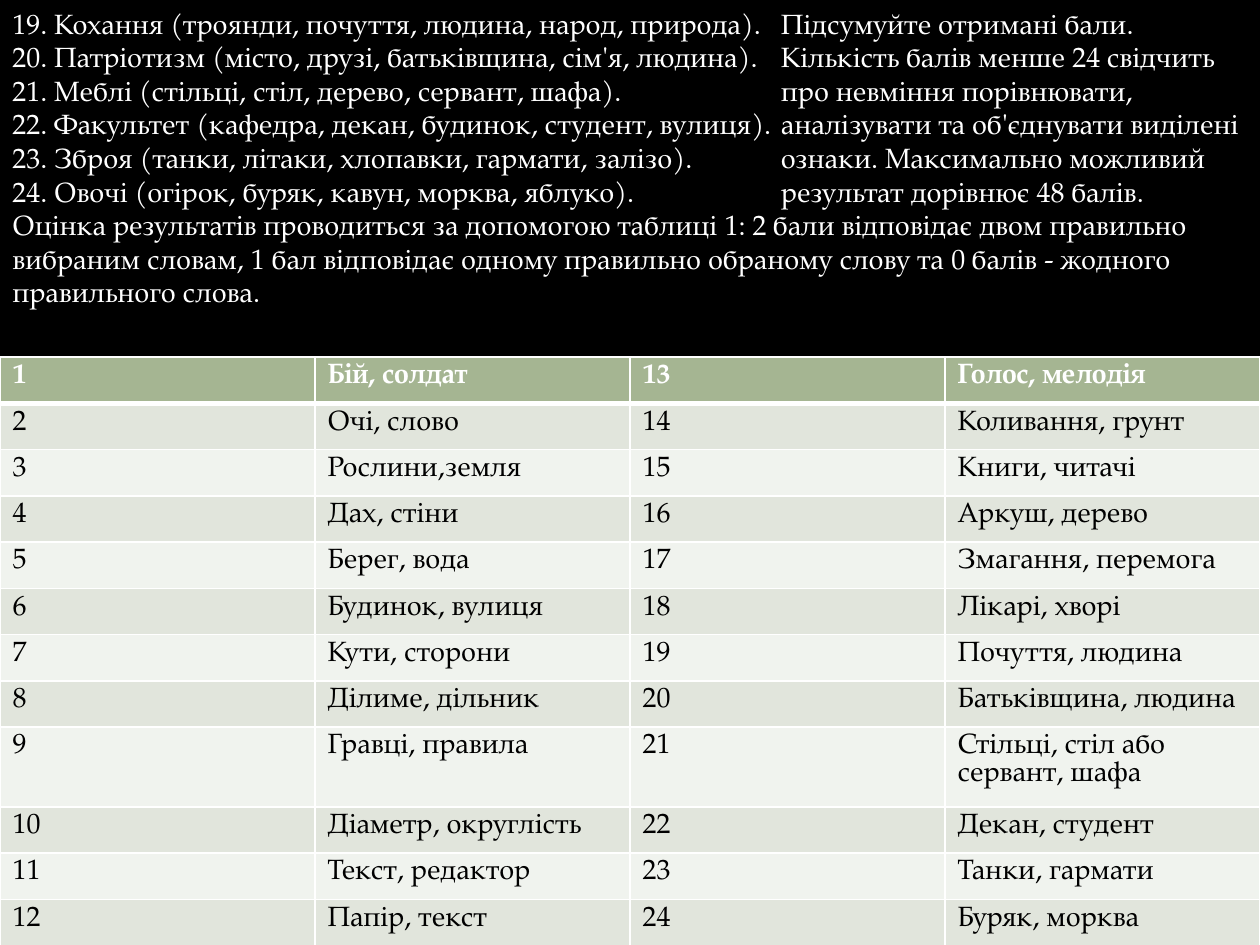
from lxml import etree
from pptx import Presentation
from pptx.dml.color import RGBColor
from pptx.enum.text import MSO_AUTO_SIZE
from pptx.oxml.ns import qn
from pptx.util import Inches, Pt

GROW = MSO_AUTO_SIZE.SHAPE_TO_FIT_TEXT
BLACK = RGBColor(0x00, 0x00, 0x00)
WHITE = RGBColor(0xFF, 0xFF, 0xFF)
HEADER_GREEN = RGBColor(0xA5, 0xB5, 0x92)
BAND_DARK = RGBColor(0xE1, 0xE5, 0xDC)
BAND_LIGHT = RGBColor(0xF0, 0xF3, 0xEE)
FONT = "TeX Gyre Pagella"
SIZE = Pt(16)
WIDTH, HEIGHT = Inches(10), Inches(7.5)
ROW_HEIGHT = Inches(0.36)
BLANK_LAYOUT = 6

TASKS = [
    "19. Кохання (троянди, почуття, людина, народ, природа).",
    "20. Патріотизм (місто, друзі, батьківщина, сім'я, людина).",
    "21. Меблі (стільці, стіл, дерево, сервант, шафа).",
    "22. Факультет (кафедра, декан, будинок, студент, вулиця).",
    "23. Зброя (танки, літаки, хлопавки, гармати, залізо).",
    "24. Овочі (огірок, буряк, кавун, морква, яблуко).",
    "Оцінка результатів проводиться за допомогою таблиці 1: 2 бали відповідає двом "
    "правильно вибраним словам, 1 бал відповідає одному правильно обраному слову "
    "та 0 балів - жодного правильного слова.",
]
SUMMARY = [
    "Підсумуйте отримані бали. Кількість балів менше 24 свідчить про невміння "
    "порівнювати, аналізувати та об'єднувати виділені ознаки. Максимально можливий "
    "результат дорівнює 48 балів."
]
ANSWERS = [
    "Бій, солдат", "Очі, слово", "Рослини,земля", "Дах, стіни",
    "Берег, вода", "Будинок, вулиця", "Кути, сторони", "Ділиме, дільник",
    "Гравці, правила", "Діаметр, округлість", "Текст, редактор", "Папір, текст",
    "Голос, мелодія", "Коливання, грунт", "Книги, читачі", "Аркуш, дерево",
    "Змагання, перемога", "Лікарі, хворі", "Почуття, людина", "Батьківщина, людина",
    "Стільці, стіл або сервант, шафа", "Декан, студент", "Танки, гармати",
    "Буряк, морква",
]


def share_box(left, top, width, height):
    """Turn shares of the slide into a box in slide units."""
    return (int(WIDTH * left), int(HEIGHT * top),
            int(WIDTH * width), int(HEIGHT * height))


def style_para(para, color, bold=False):
    """Give a paragraph the common font in the given colour."""
    para.font.name = FONT
    para.font.size = SIZE
    para.font.color.rgb = color
    para.font.bold = bold


def add_text(page, box, lines):
    """Place white paragraphs in a wrapping text box."""
    frame = page.shapes.add_textbox(*box).text_frame
    frame.word_wrap = True
    frame.auto_size = GROW
    frame.text = "\n".join(lines)
    for para in frame.paragraphs:
        style_para(para, WHITE)


def add_border(cell, side, points):
    """Draw one white border of a cell."""
    line = etree.SubElement(cell._tc.get_or_add_tcPr(), qn(f"a:ln{side}"),
                            w=str(Pt(points)))
    fill = etree.SubElement(line, qn("a:solidFill"))
    etree.SubElement(fill, qn("a:srgbClr"), val=str(WHITE))


def fill_cell(cell, text, row):
    """Write a cell and style it by its row."""
    header = row == 0
    widths = {"L": 1, "R": 1, "T": 3 if row == 1 else 1, "B": 3 if header else 1}
    for side, points in widths.items():
        add_border(cell, side, points)
    cell.fill.solid()
    band = BAND_DARK if row % 2 else BAND_LIGHT
    cell.fill.fore_color.rgb = HEADER_GREEN if header else band
    cell.text = text
    style_para(cell.text_frame.paragraphs[0], WHITE if header else BLACK, header)


def add_answer_table(page, box, answers):
    """Place the numbered answers in two halves side by side."""
    half = len(answers) // 2
    table = page.shapes.add_table(half, 4, *box).table
    for row in range(half):
        table.rows[row].height = ROW_HEIGHT
        texts = [str(row + 1), answers[row], str(row + half + 1), answers[row + half]]
        for column, text in enumerate(texts):
            fill_cell(table.cell(row, column), text, row)


def main():
    """Build and save the slide."""
    deck = Presentation()
    deck.slide_width, deck.slide_height = WIDTH, HEIGHT
    page = deck.slides.add_slide(deck.slide_layouts[BLANK_LAYOUT])
    page.background.fill.solid()
    page.background.fill.fore_color.rgb = BLACK
    add_text(page, share_box(0, 0, 1, 0.336), TASKS)
    add_text(page, share_box(0.61, 0, 0.39, 0.23), SUMMARY)
    add_answer_table(page, share_box(0, 0.378, 1, 0.622), ANSWERS)
    deck.save("out.pptx")


if __name__ == "__main__":
    main()
